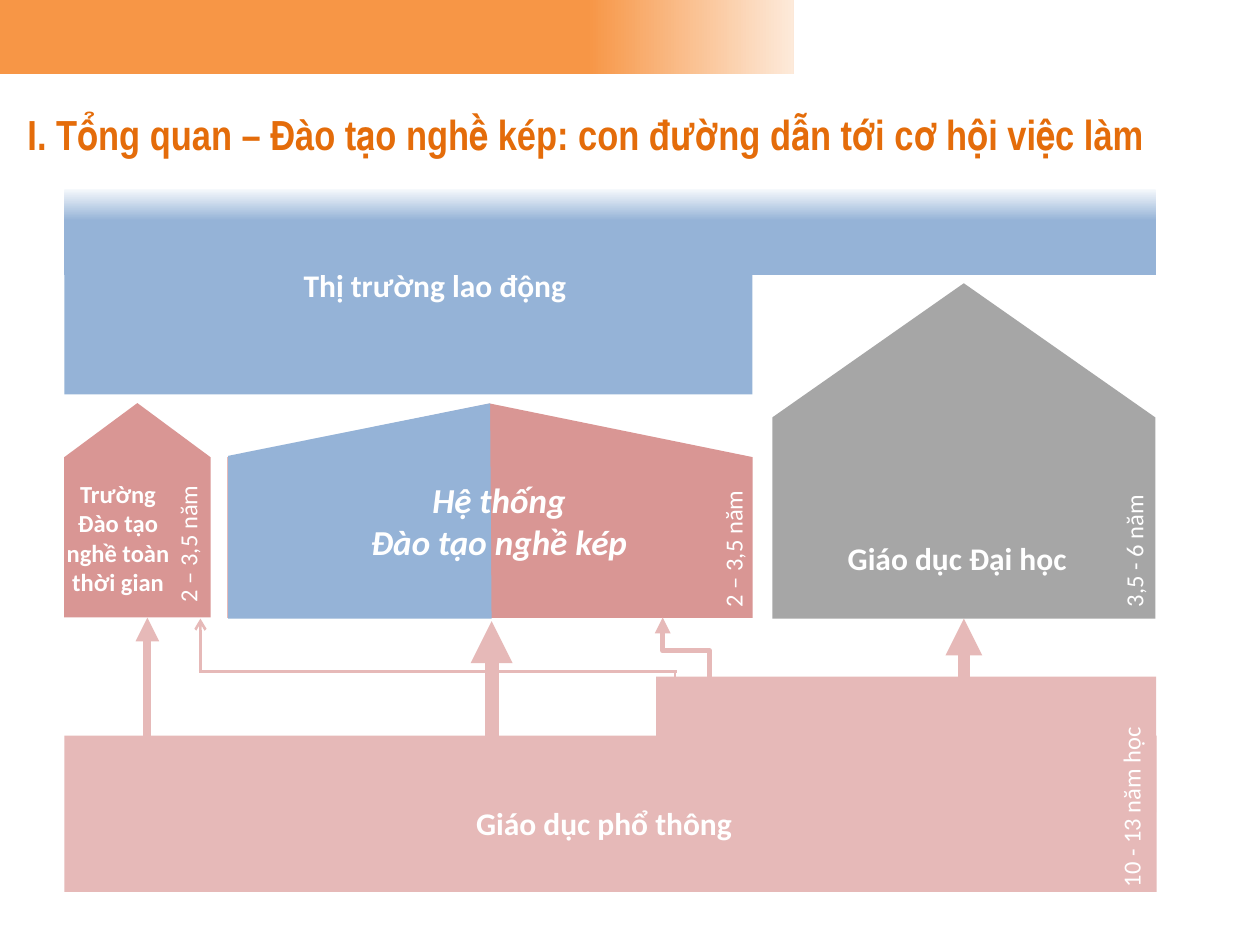
"""Build the slide on dual vocational training as a path to employment."""
from dataclasses import dataclass
from typing import Optional

from pptx import Presentation
from pptx import util as u
from pptx.dml.color import RGBColor
from pptx.enum import shapes, text
from pptx.oxml import ns
from pptx.oxml.xmlchemy import OxmlElement

COLORS = {
    "banner": "F79646", "banner_end": "FDEADA", "title": "E46C0A",
    "school": "E6B9B8", "training": "D99694", "university": "A6A6A6",
    "market": "95B3D7", "market_top": "F6F9FC", "white": "FFFFFF",
}
HEADING = {"size": u.Pt(18), "bold": True}
SMALL = {"size": u.Pt(14)}
SMALL_BOLD = {"size": u.Pt(14), "bold": True}
DUAL = {"size": u.Pt(20), "bold": True, "italic": True}
TITLE = {"size": u.Pt(24), "bold": True, "name": "Arial Narrow"}


@dataclass
class Block:
    box: tuple
    color: str


@dataclass
class House:
    box: tuple
    color: str
    roof: float


@dataclass
class Fade:
    box: tuple
    stops: tuple
    angle: float


@dataclass
class Outline:
    points: tuple
    color: str


@dataclass
class Label:
    box: tuple
    lines: tuple
    style: dict
    centered: bool = False
    upright: bool = False


@dataclass
class Path:
    start: tuple
    end: tuple
    width: float
    head: Optional[str] = None
    turned: bool = False


def rgb(name: str) -> RGBColor:
    """Return a named colour."""
    return RGBColor.from_string(COLORS[name])


def lengths(values: tuple) -> list:
    """Convert centimetres to slide lengths."""
    return [u.Cm(value) for value in values]


def apply(target, values: dict) -> None:
    """Set attributes from a dict of format values."""
    for name, value in values.items():
        setattr(target, name, value)


def paint(shape, color: str) -> None:
    """Give a shape a plain fill without line or shadow."""
    shape.shadow.inherit = False
    shape.line.fill.background()
    shape.fill.solid()
    shape.fill.fore_color.rgb = rgb(color)


def draw_block(slide, item: Block):
    """Draw a filled rectangle."""
    shape = slide.shapes.add_shape(shapes.MSO_SHAPE.RECTANGLE, *lengths(item.box))
    paint(shape, item.color)
    return shape


def draw_house(slide, item: House) -> None:
    """Draw a wide arrow turned upwards."""
    shape = slide.shapes.add_shape(shapes.MSO_SHAPE.RIGHT_ARROW, *lengths(item.box))
    shape.adjustments[0] = 1
    shape.adjustments[1] = item.roof
    shape.rotation = 270
    paint(shape, item.color)


def draw_fade(slide, item: Fade) -> None:
    """Draw a rectangle with a two-stop gradient."""
    shape = draw_block(slide, Block(item.box, item.stops[0][1]))
    shape.fill.gradient()
    shape.fill.gradient_angle = item.angle
    for stop, (position, color) in zip(shape.fill.gradient_stops, item.stops):
        stop.position = position
        stop.color.rgb = rgb(color)


def draw_outline(slide, item: Outline) -> None:
    """Draw a closed polygon."""
    first, *others = [lengths(point) for point in item.points]
    builder = slide.shapes.build_freeform(*first)
    builder.add_line_segments(others, close=True)
    paint(builder.convert_to_shape(), item.color)


def write(frame, lines: tuple, style: dict, color: str, alignment) -> None:
    """Fill a text frame with formatted paragraphs."""
    frame.word_wrap = True
    frame.text = "\n".join(lines)
    for paragraph in frame.paragraphs:
        paragraph.alignment = alignment
        apply(paragraph.runs[0].font, {"name": "Calibri", **style})
        paragraph.runs[0].font.color.rgb = rgb(color)


def draw_label(slide, item: Label) -> None:
    """Draw a white text label."""
    shape = slide.shapes.add_textbox(*lengths(item.box))
    shape.rotation = 270 if item.upright else 0
    alignment = text.PP_ALIGN.CENTER if item.centered else text.PP_ALIGN.LEFT
    write(shape.text_frame, item.lines, item.style, "white", alignment)


def draw_path(slide, item: Path) -> None:
    """Draw a straight path, or an elbow turned upwards."""
    kind = shapes.MSO_CONNECTOR.ELBOW if item.turned else shapes.MSO_CONNECTOR.STRAIGHT
    shape = slide.shapes.add_connector(kind, *lengths(item.start + item.end))
    shape.line.width = u.Pt(item.width)
    shape.line.color.rgb = rgb("school")
    properties = shape._element.spPr
    if item.head:
        head = OxmlElement("a:tailEnd")
        head.set("type", item.head)
        shape.line._get_or_add_ln().append(head)
    properties.append(OxmlElement("a:effectLst"))
    if item.turned:
        properties.find(ns.qn("a:xfrm")).set("rot", "16200000")


DRAWERS = {Block: draw_block, House: draw_house, Fade: draw_fade,
           Outline: draw_outline, Label: draw_label, Path: draw_path}

ITEMS = [
    Fade((0, 0, 16, 1.5), ((0.74, "banner"), (1, "banner_end")), 0),
    Block((13.23, 13.64, 10.08, 2.74), "school"),
    House((0.61, 8.81, 4.32, 2.95), "training", 0.37),
    House((16.05, 5.23, 6.76, 7.72), "university", 0.4),
    Label((16.84, 10.74, 5.31, 1.02), ("Giáo dục Đại học",), HEADING),
    Block((1.3, 14.83, 22.02, 3.15), "school"),
    Label((9.35, 16.08, 6.22, 1.02), ("Giáo dục phổ thông",), HEADING),
    Label((1.02, 9.53, 2.72, 2.64), ("Trường Đào tạo nghề toàn thời gian",),
          SMALL_BOLD, centered=True),
    Label((20.47, 15.37, 4.67, 0.86), ("10 - 13 năm học",), SMALL, upright=True),
    Label((21.16, 10.36, 3.4, 0.86), ("3,5 - 6 năm",), SMALL, upright=True),
    House((7.72, 5, 4.32, 10.59), "training", 0.25),
    Outline(((4.6, 12.47), (4.6, 9.19), (9.88, 8.13), (9.91, 12.47)), "market"),
    Label((7.19, 9.53, 5.74, 1.96), ("Hệ thống", "Đào tạo nghề kép"), DUAL, centered=True),
    Label((13.08, 10.36, 3.4, 0.86), ("2 – 3,5 năm",), SMALL, upright=True),
    Label((1.63, 9.8, 4.32, 0.86), ("2 – 3,5 năm",), SMALL, upright=True),
    Path((19.43, 14.15), (19.43, 12.47), 7, "triangle"),
    Path((9.91, 15.24), (9.91, 12.52), 8, "triangle"),
    Path((2.97, 14.83), (2.97, 12.45), 4.5, "triangle"),
    Path((13.16, 13.59), (14.5, 12.65), 3, "triangle", turned=True),
    Path((4.04, 13.54), (4.04, 12.47), 1.5, "arrow"),
    Path((4.01, 13.54), (13.64, 13.54), 1.5),
    Path((13.61, 13.77), (13.61, 13.54), 1.5),
    Block((1.3, 5.23, 13.87, 2.72), "market"),
    Label((3.73, 5.23, 10.08, 1.02), ("Thị trường lao động",), HEADING, centered=True),
    Fade((1.3, 3.81, 22, 1.73), ((0, "market_top"), (0.37, "market")), 270),
]


def main() -> None:
    """Build and save the presentation."""
    presentation = Presentation()
    apply(presentation, {"slide_width": u.Cm(25.4), "slide_height": u.Cm(19.05)})
    slide = presentation.slides.add_slide(presentation.slide_layouts[5])
    title = slide.shapes.title
    box = lengths((0.3, 2.08, 24.61, 1.22))
    apply(title, dict(zip(("left", "top", "width", "height"), box)))
    apply(title.text_frame, {"auto_size": text.MSO_AUTO_SIZE.NONE,
                             "vertical_anchor": text.MSO_ANCHOR.MIDDLE})
    write(title.text_frame,
          ("I. Tổng quan – Đào tạo nghề kép: con đường dẫn tới cơ hội việc làm",),
          TITLE, "title", text.PP_ALIGN.LEFT)
    for item in ITEMS:
        DRAWERS[type(item)](slide, item)
    presentation.save("out.pptx")


if __name__ == "__main__":
    main()
